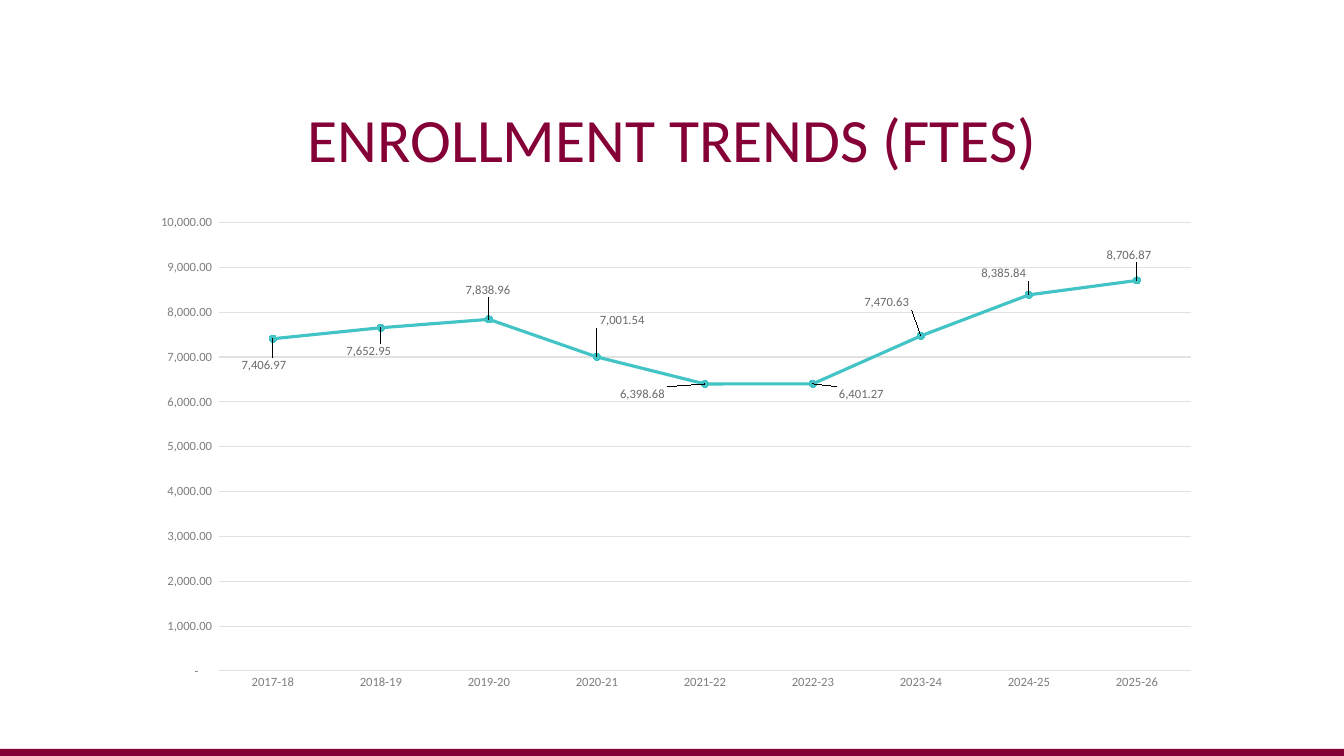
from lxml import etree
from pptx import Presentation
from pptx.chart.data import CategoryChartData
from pptx.dml.color import RGBColor
from pptx.enum.chart import (XL_CHART_TYPE, XL_LABEL_POSITION, XL_MARKER_STYLE,
                             XL_TICK_MARK)
from pptx.enum.shapes import MSO_SHAPE
from pptx.enum.text import MSO_ANCHOR, PP_ALIGN
from pptx.oxml.ns import qn
from pptx.util import Inches, Pt

LINE = XL_CHART_TYPE.LINE_MARKERS
MIDDLE = XL_LABEL_POSITION.CENTER
CIRCLE = XL_MARKER_STYLE.CIRCLE
NO_TICK = XL_TICK_MARK.NONE
RECT = MSO_SHAPE.RECTANGLE
ANCHOR = MSO_ANCHOR.MIDDLE
CENTER = PP_ALIGN.CENTER

FORMAT = r'_(* #,##0.00_);_(* \(#,##0.00\);_(* "-"??_);_(@_)'
YEARS = [f"{year}-{year - 1999}" for year in range(2017, 2026)]
FTES = [7406.97, 7652.95, 7838.96, 7001.54, 6398.68, 6401.27,
        7470.63, 8385.84, 8706.87]
# Label centres, in inches right of and below their points
SHIFTS = [(-0.09, 0.26), (-0.12, 0.23), (-0.01, -0.29), (0.25, -0.36),
          (-0.62, 0.1), (0.48, 0.1), (-0.34, -0.33), (-0.25, -0.21),
          (-0.08, -0.25)]


def color(code):
    return RGBColor.from_string(code)


def layout(**parts):
    """Return a manual chart layout with the given settings."""
    node = etree.Element(qn("c:layout"))
    manual = etree.SubElement(node, qn("c:manualLayout"))
    for name, value in parts.items():
        etree.SubElement(manual, qn(f"c:{name}")).set("val", str(value))
    return node


class Deck:
    face = "Calibri"
    wine = "860038"
    teal = "42C3C5"
    rule = "E1E1E1"
    gray = "7E7E7E"
    dark = "6A6A6A"

    def __init__(self):
        self.prs = Presentation()
        self.prs.slide_width = Inches(13.33)
        self.prs.slide_height = Inches(7.5)
        self.slide = self.prs.slides.add_slide(self.prs.slide_layouts[6])

    def style(self, font, size, code):
        font.name = self.face
        font.size = Pt(size)
        font.color.rgb = color(code)

    def stroke(self, line, code, width):
        line.color.rgb = color(code)
        line.width = Pt(width)

    def bar(self, *box):
        shape = self.slide.shapes.add_shape(RECT, *map(Inches, box))
        shape.shadow.inherit = False
        shape.fill.solid()
        shape.fill.fore_color.rgb = color(self.wine)
        shape.line.fill.background()

    def title(self, text, *box):
        frame = self.slide.shapes.add_textbox(*map(Inches, box)).text_frame
        frame.word_wrap = True
        frame.vertical_anchor = ANCHOR
        para = frame.paragraphs[0]
        para.alignment = CENTER
        para.line_spacing = 0.9
        run = para.add_run()
        run.text = text
        self.style(run.font, 44, "850037")

    def axis(self, axis):
        axis.major_tick_mark = axis.minor_tick_mark = NO_TICK
        self.style(axis.tick_labels.font, 9, self.gray)

    def labels(self, series, wide, high):
        """Show every value, moved off its point by its shift."""
        group = series.data_labels
        group.show_value = True
        group.number_format = FORMAT
        group.number_format_is_linked = False
        self.style(group.font, 9, self.dark)
        for index, (right, down) in enumerate(SHIFTS):
            label = series.points[index].data_label
            self.style(label.font, 9, self.dark)
            label.position = MIDDLE
            node = group._element.findall(qn("c:dLbl"))[index]
            node.insert(1, layout(x=round(right / wide, 4),
                                  y=round(down / high, 4)))

    def chart(self, left, top, wide, high):
        data = CategoryChartData(number_format=FORMAT)
        data.categories = YEARS
        data.add_series("Series 1", FTES)
        chart = self.slide.shapes.add_chart(
            LINE, *map(Inches, (left, top, wide, high)), data).chart
        chart.has_title = chart.has_legend = False
        self.style(chart.font, 10, "393939")

        years, scale = chart.category_axis, chart.value_axis
        self.axis(years)
        self.stroke(years.format.line, self.rule, 0.75)
        self.axis(scale)
        scale.minimum_scale, scale.maximum_scale = 0, 10000
        scale.major_unit = 1000
        scale.format.line.fill.background()
        scale.has_major_gridlines = True
        self.stroke(scale.major_gridlines.format.line, self.rule, 0.75)
        scale.tick_labels.number_format = FORMAT
        scale.tick_labels.number_format_is_linked = False

        plot = chart.plots[0]
        plot.vary_by_categories = False
        series = plot.series[0]
        series.smooth = False
        self.stroke(series.format.line, self.teal, 2.25)
        marker = series.marker
        marker.style, marker.size = CIRCLE, 5
        marker.format.fill.solid()
        marker.format.fill.fore_color.rgb = color(self.teal)
        self.stroke(marker.format.line, self.teal, 0.75)
        self.labels(series, wide, high)

        area = chart._chartSpace.find(".//" + qn("c:plotArea"))
        for old in area.findall(qn("c:layout")):
            area.remove(old)
        area.insert(0, layout(layoutTarget="inner", xMode="edge", yMode="edge",
                              x=0.073, y=0.068, w=0.913, h=0.869))


def main():
    deck = Deck()
    deck.bar(-0.01, 7.43, 13.36, 0.13)
    deck.title("ENROLLMENT TRENDS (FTES)", 0.92, 0.69, 11.5, 1.45)
    deck.chart(1.4, 1.86, 10.56, 5.12)
    deck.prs.save("out.pptx")


if __name__ == "__main__":
    main()
